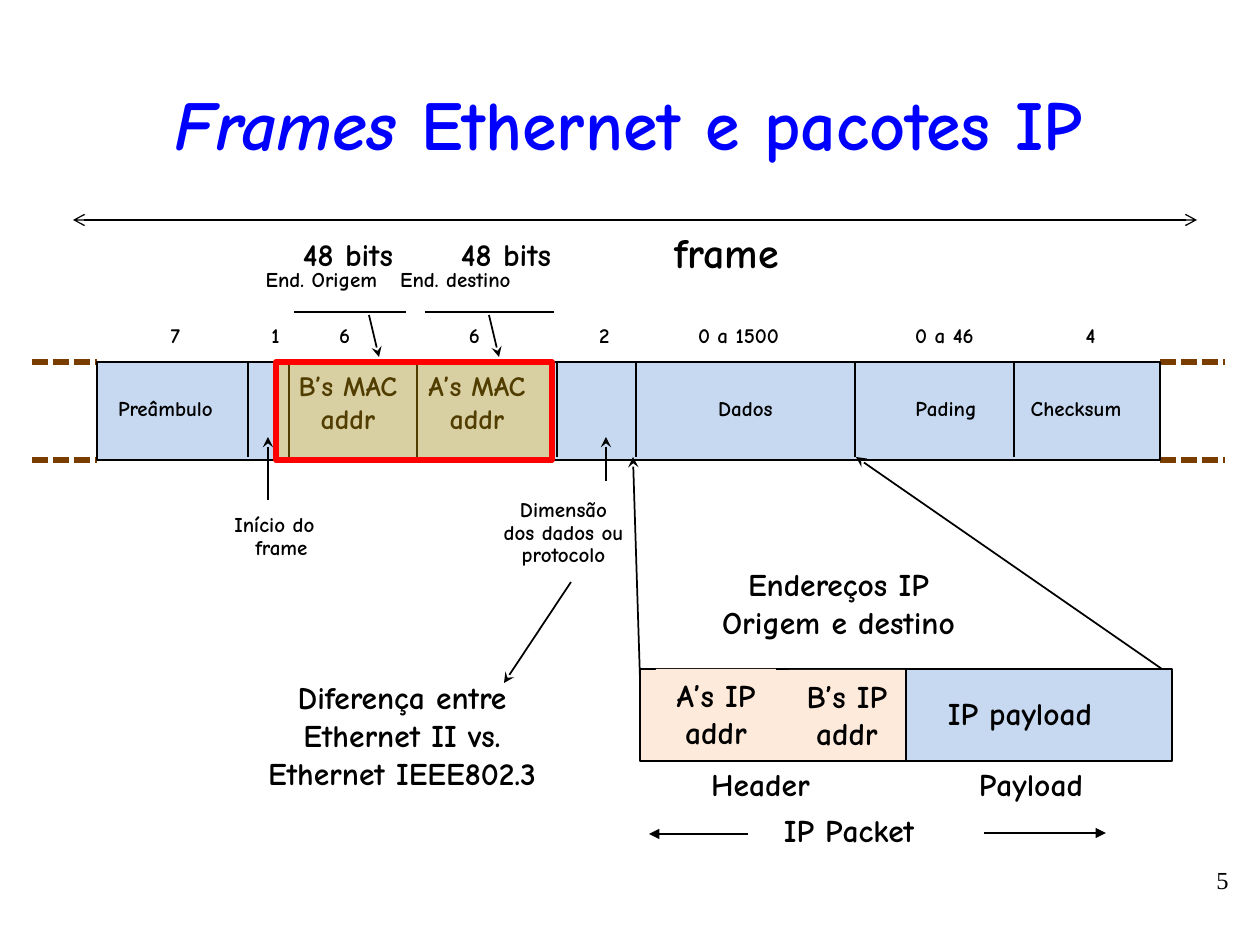
from lxml.etree import SubElement
from pptx import Presentation
from pptx.dml.color import RGBColor
from pptx.enum.dml import MSO_LINE_DASH_STYLE as DASH
from pptx.enum.shapes import MSO_CONNECTOR, MSO_SHAPE
from pptx.enum.text import MSO_ANCHOR, MSO_AUTO_SIZE as AUTO, PP_ALIGN
from pptx.oxml.ns import qn
from pptx.util import Pt

EMU_PER_PX = 914400 / 126
FONT = "Comic Neue"
BLACK, BLUE, PEACH = "000000", "C6D9F1", "FDEADA"


def px(length):
    """Turn pixels into EMU."""
    return round(length * EMU_PER_PX)


def color(value):
    """Turn a hex string into a colour."""
    return RGBColor.from_string(value)


def write(shape, lines, size, wrap=False, align=PP_ALIGN.CENTER, spacing=None, **font):
    """Write lines into a shape, each line being a list of (text, italic) runs or a string."""
    frame = shape.text_frame
    frame.word_wrap = wrap
    style = {"name": FONT, "size": Pt(size), "bold": True} | font
    tint = style.pop("tint", BLACK)
    for index, line in enumerate(lines):
        paragraph = frame.paragraphs[0] if index == 0 else frame.add_paragraph()
        paragraph.alignment = align
        paragraph.line_spacing = spacing
        for text, italic in [(line, False)] if isinstance(line, str) else line:
            run = paragraph.add_run()
            run.text = text
            for key, value in (style | {"italic": italic}).items():
                setattr(run.font, key, value)
            run.font.color.rgb = color(tint)
    return frame


def label(slide, x, y, w, h, *lines, size=18, **options):
    """Add a text box that grows to its text."""
    box = slide.shapes.add_textbox(px(x), px(y), px(w), px(h))
    spacing = 0.9 if size == 12 else None
    frame = write(box, lines, size, spacing=spacing, **options)
    frame.auto_size = AUTO.SHAPE_TO_FIT_TEXT
    return frame


def block(slide, x, y, w, h, fill, edge=BLACK, width=0.75, alpha=None):
    """Add a rectangle, without an outline if edge is None."""
    rect = slide.shapes.add_shape(MSO_SHAPE.RECTANGLE, px(x), px(y), px(w), px(h))
    rect.shadow.inherit = False
    rect.fill.solid()
    rect.fill.fore_color.rgb = color(fill)
    if alpha:
        tint = rect.fill._xPr.find(qn("a:solidFill"))[0]
        SubElement(tint, qn("a:alpha"), val=str(alpha * 1000))
    if edge:
        rect.line.color.rgb = color(edge)
        rect.line.width = Pt(width)
    else:
        rect.line.fill.background()
    return rect


def line(slide, x1, y1, x2, y2, width=1, tint=BLACK, dash=None, head=None, tail=None):
    """Add a straight line with optional arrowheads."""
    link = slide.shapes.add_connector(
        MSO_CONNECTOR.STRAIGHT, px(x1), px(y1), px(x2), px(y2))
    link.line.color.rgb = color(tint)
    link.line.width = Pt(width)
    if dash:
        link.line.dash_style = dash
    outline = link.line._get_or_add_ln()
    for tag, kind in (("a:headEnd", head), ("a:tailEnd", tail)):
        if kind:
            SubElement(outline, qn(tag), type=kind)
    SubElement(link._element.spPr, qn("a:effectLst"))


def add_title(slide, x, y, w, h):
    """Place the slide title in its box."""
    title = slide.shapes.add_textbox(px(x), px(y), px(w), px(h))
    heading = [("Frames", True), (" Ethernet e pacotes IP", False)]
    frame = write(title, [heading], 40, wrap=True, tint="0000FF")
    frame.vertical_anchor = MSO_ANCHOR.MIDDLE


def add_frame_header(slide, x, y, w):
    """Place the frame extent, address captions and byte counts."""
    label(slide, x + 580, y, 147, 63, "frame", size=24)
    line(slide, x, y, x + w, y, 0.75, head="arrow", tail="arrow")
    addresses = [("End. Origem", 207, 180, 221, 333, 296),
                 ("End. destino", 365, 314, 352, 481, 416)]
    for caption, bits, name, start, end, pointer in addresses:
        label(slide, x + bits, y + 9, 136, 50, "48 bits")
        label(slide, x + name, y + 43, 137, 37, caption, size=12)
        line(slide, x + start, y + 92, x + end, y + 92, 0.75)
        line(slide, x + pointer, y + 95, x + pointer + 10, y + 137, tail="stealth")
    counts = [("7", 83, 39), ("1", 183, 39), ("6", 252, 39), ("6", 382, 39),
              ("2", 512, 39), ("0 a 1500", 605, 121), ("0 a 46", 824, 95), ("4", 998, 39)]
    for count, left, width in counts:
        label(slide, x + left, y + 99, width, 37, count, size=12)


def add_frame_bar(slide, x, y, w, h):
    """Place the Ethernet frame with its fields and highlighted addresses."""
    for left in (x - 65, x + w):
        for edge in (y, y + h):
            line(slide, left, edge, left + 65, edge, 3, "7A3D00", DASH.SQUARE_DOT)
    block(slide, x, y, w, h, BLUE)
    for divider in (151, 192, 320, 460, 539, 758, 917):
        line(slide, x + divider, y + 1, x + divider, y + h - 3)
    fields = [("Preâmbulo", 5, 127), ("Dados", 605, 87),
              ("Pading", 804, 90), ("Checksum", 917, 124)]
    for field, left, width in fields:
        label(slide, x + left, y + 30, width, 37, field, size=12)
    for owner, left in (("B’s MAC", 181), ("A’s MAC", 310)):
        label(slide, x + left, y, 140, 81, owner, "addr", size=16)
    block(slide, x + 179, y, 276, h, "FFC000", "FF0000", 3.25, alpha=32)


def add_field_notes(slide, x, y):
    """Place the notes under the frame, with their arrows."""
    start = label(slide, x, y + 71, 115, 59, "Início do", "frame", size=12)
    start.paragraphs[1]._p.get_or_add_pPr().set("marL", str(px(14)))
    label(slide, x + 272, y + 56, 149, 82, "Dimensão dos dados ou protocolo",
          size=12, wrap=True)
    label(slide, x + 13, y + 235, 344, 127,
          "Diferença entre", "Ethernet II vs.", "Ethernet IEEE802.3")
    for x1, y1, x2, y2 in ((51, 63, 51, 0), (389, 44, 389, 0), (354, 145, 287, 246)):
        line(slide, x + x1, y + y1, x + x2, y + y2, tail="stealth")


def add_packet(slide, x, y, w, h):
    """Place the IP packet, its captions and its links to the frame."""
    half = w // 2
    block(slide, x + half, y, half, h, BLUE)
    block(slide, x, y, half, h, PEACH)
    for owner, left, top, width in (("A’s IP", 16, 0, 120), ("B’s IP", 149, 1, 116)):
        address = block(slide, x + left, y + top, width, 89, PEACH, None)
        write(address, [owner, "addr"], 18)
    captions = [(286, 19, 188, 50, "IP payload"), (122, 136, 174, 50, "IP Packet"),
                (54, -110, 289, 89, "Endereços IP", "Origem e destino"),
                (52, 90, 137, 50, "Header"), (321, 90, 140, 50, "Payload")]
    for left, top, *rest in captions:
        label(slide, x + left, y + top, *rest)
    arrows = [(344, 164, 466, 164, 0.75, "triangle"), (108, 165, 9, 165, 0.75, "triangle"),
              (0, 9, -7, -212, 1, "stealth"), (522, 0, 216, -212, 1, "stealth")]
    for x1, y1, x2, y2, width, tail in arrows:
        line(slide, x + x1, y + y1, x + x2, y + y2, width, tail=tail)


def add_page_number(slide, x, y, w, h):
    """Place the page number in its box."""
    number = slide.shapes.add_textbox(px(x), px(y), px(w), px(h))
    write(number, ["5"], 14, wrap=True, align=PP_ALIGN.RIGHT,
          name="Times New Roman", bold=False)


def main():
    """Build and save the slide."""
    deck = Presentation()
    deck.slide_width, deck.slide_height = px(1260), px(945)
    slide = deck.slides.add_slide(deck.slide_layouts[6])
    add_title(slide, 32, 54, 1193, 136)
    add_frame_header(slide, 73, 220, 1124)
    add_frame_bar(slide, 97, 362, 1063, 98)
    add_field_notes(slide, 217, 437)
    add_packet(slide, 640, 669, 532, 92)
    add_page_number(slide, 948, 859, 293, 66)
    deck.save("out.pptx")


if __name__ == "__main__":
    main()
